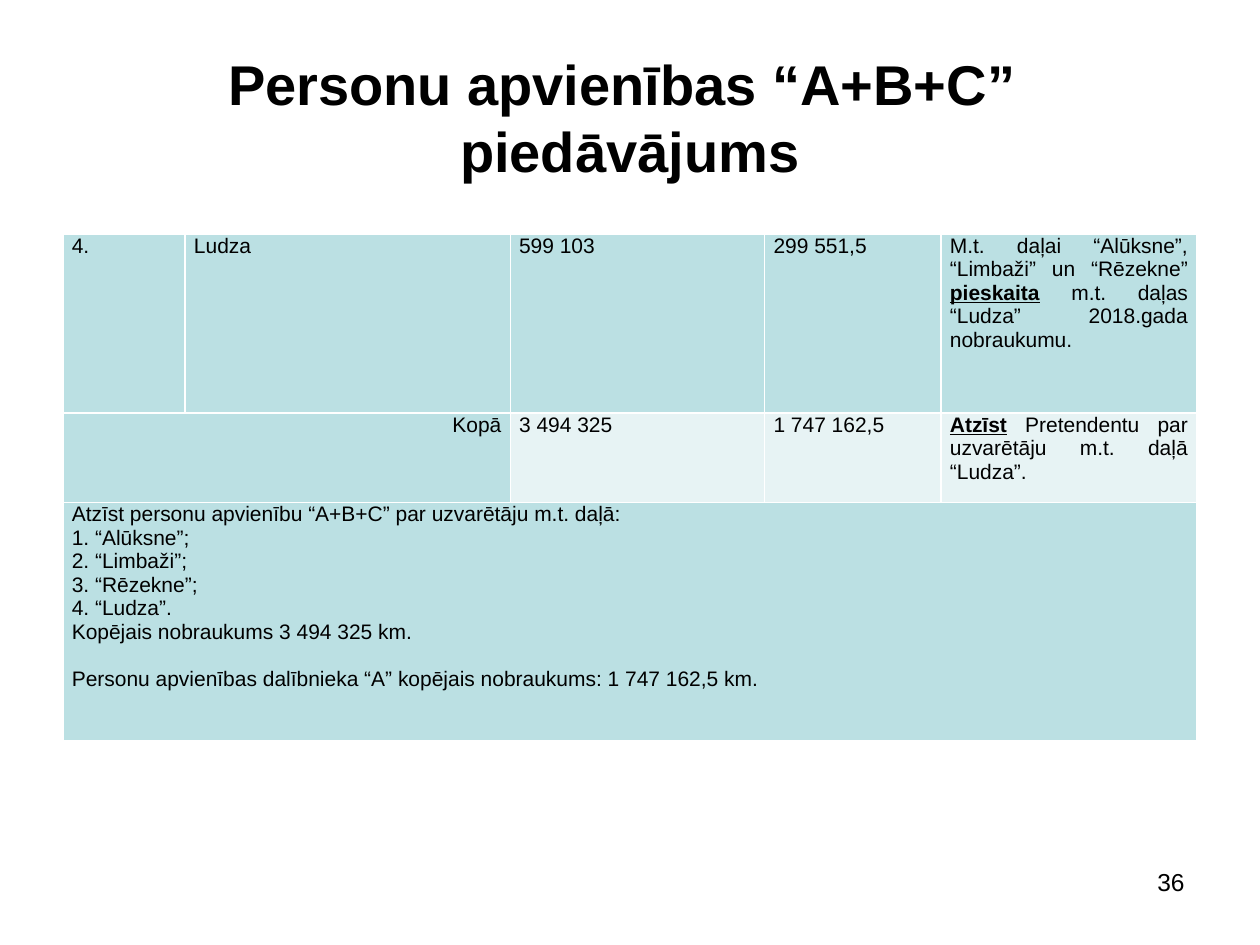
from lxml.etree import SubElement
from pptx import Presentation
from pptx.dml.color import RGBColor
from pptx.enum.text import MSO_ANCHOR, PP_ALIGN as Align
from pptx.oxml.ns import qn
from pptx.util import Inches, Pt

BLACK = RGBColor(0x00, 0x00, 0x00)
WHITE = RGBColor(0xFF, 0xFF, 0xFF)
TEAL = RGBColor(0xBB, 0xE0, 0xE3)
PALE_TEAL = RGBColor(0xE7, 0xF3, 0xF4)

COLUMN_WIDTHS = [0.97, 2.58, 2.02, 1.4, 2.03]
ROW_HEIGHTS = [1.42, 0.71, 1.89]
LUDZA_NOTE = [
    ("M.t. daļai “Alūksne”, “Limbaži” un “Rēzekne” ", False),
    ("pieskaita", True),
    (" m.t. daļas “Ludza” 2018.gada nobraukumu. ", False),
]
TOTAL_NOTE = [
    ("Atzīst", True),
    (" Pretendentu par uzvarētāju m.t. daļā “Ludza”. ", False),
]
SUMMARY = [
    "Atzīst personu apvienību “A+B+C” par uzvarētāju m.t. daļā:",
    "1. “Alūksne”;",
    "2. “Limbaži”;",
    "3. “Rēzekne”;",
    "4. “Ludza”.",
    "Kopējais nobraukums 3 494 325 km.",
    "Personu apvienības dalībnieka “A” kopējais nobraukums: 1 747 162,5 km. ",
]


def plain(text):
    """Return one paragraph made of a single unmarked run."""
    return [(text, False)]


ROWS = [
    [[plain("4.")], [plain("Ludza")], [plain("599 103")],
     [plain("299 551,5")], [LUDZA_NOTE]],
    [[plain("Kopā")], [], [plain("3 494 325 ")],
     [plain("1 747 162,5")], [TOTAL_NOTE]],
    [[plain(line) for line in SUMMARY], [], [], [], []],
]


def add_run(paragraph, text, size, bold=False, underline=False):
    """Add one black Arial run to a paragraph."""
    run = paragraph.add_run()
    run.text = text
    font = run.font
    font.name, font.size = "Arial", Pt(size)
    font.bold, font.underline = bold, underline
    font.color.rgb = BLACK


def place_title(slide, left, top, width, height):
    """Place the two-line title in its placeholder."""
    title = slide.shapes.title
    title.left, title.top, title.width, title.height = left, top, width, height
    frame = title.text_frame
    frame.vertical_anchor = MSO_ANCHOR.MIDDLE
    paragraph = frame.paragraphs[0]
    paragraph.alignment = Align.CENTER
    add_run(paragraph, "Personu apvienības “A+B+C” ", 32, bold=True)
    paragraph.add_line_break()
    add_run(paragraph, "piedāvājums", 32, bold=True)


def style_cell(cell, color):
    """Give a cell its margins, white borders and fill."""
    cell.margin_left = cell.margin_right = Inches(0.07)
    cell.margin_top = cell.margin_bottom = 0
    properties = cell._tc.get_or_add_tcPr()
    for side in ("a:lnL", "a:lnR", "a:lnT", "a:lnB"):
        line = SubElement(properties, qn(side), w=str(Pt(1)))
        fill = SubElement(line, qn("a:solidFill"))
        SubElement(fill, qn("a:srgbClr"), val=str(WHITE))
    cell.fill.solid()
    cell.fill.fore_color.rgb = color


def fill_cell(cell, paragraphs, alignment):
    """Write paragraphs of plain and emphasised runs into a cell."""
    frame = cell.text_frame
    for index, runs in enumerate(paragraphs):
        paragraph = frame.add_paragraph() if index else frame.paragraphs[0]
        paragraph.alignment = alignment
        for text, emphasis in runs:
            add_run(paragraph, text, 12, emphasis, emphasis)


def place_table(slide, left, top, width, height):
    """Place the offer table with its total and summary rows."""
    table = slide.shapes.add_table(
        len(ROWS), len(COLUMN_WIDTHS), left, top, width, height).table
    for column, column_width in zip(table.columns, COLUMN_WIDTHS):
        column.width = Inches(column_width)
    for row, row_height in zip(table.rows, ROW_HEIGHTS):
        row.height = Inches(row_height)
    for row_index, row in enumerate(ROWS):
        for column_index, paragraphs in enumerate(row):
            cell = table.cell(row_index, column_index)
            is_total = row_index == 1
            style_cell(cell, PALE_TEAL if is_total and column_index > 1 else TEAL)
            is_label = is_total and column_index == 0
            fill_cell(cell, paragraphs, Align.RIGHT if is_label else Align.JUSTIFY)
    table.cell(1, 0).merge(table.cell(1, 1))
    table.cell(2, 0).merge(table.cell(2, 4))
    table.cell(2, 0).text_frame.paragraphs[-1].space_before = Pt(13.5)


def place_page_number(slide, left, top, width, height):
    """Place the right-aligned page number."""
    frame = slide.shapes.add_textbox(left, top, width, height).text_frame
    frame.word_wrap = True
    paragraph = frame.paragraphs[0]
    paragraph.alignment = Align.RIGHT
    add_run(paragraph, "36", 14)


def main():
    """Build and save the slide."""
    presentation = Presentation()
    presentation.slide_width, presentation.slide_height = Inches(10), Inches(7.5)
    slide = presentation.slides.add_slide(presentation.slide_layouts[5])
    slide.background.fill.solid()
    slide.background.fill.fore_color.rgb = WHITE
    place_title(slide, Inches(0.5), Inches(0.3), Inches(9), Inches(1.25))
    place_table(slide, Inches(0.5), Inches(1.86), Inches(9), Inches(4.02))
    place_page_number(slide, Inches(7.17), Inches(6.83), Inches(2.33), Inches(0.52))
    presentation.save("out.pptx")


if __name__ == "__main__":
    main()
